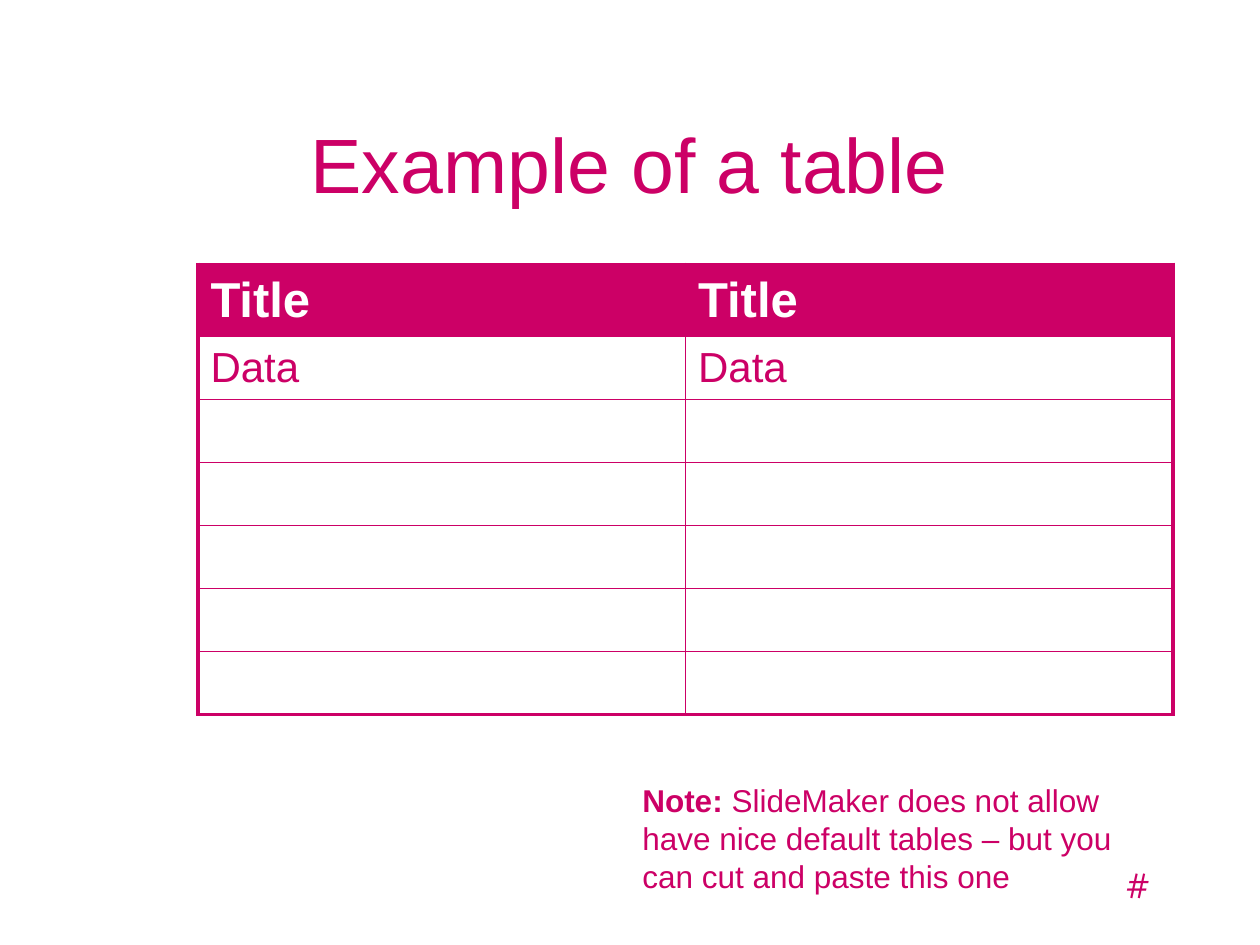
"""Build a slide with a title, a two-column ruled table and a note."""
import pptx
import pptx.dml.color
import pptx.enum.text
import pptx.oxml
import pptx.oxml.ns
import pptx.util
from dataclasses import dataclass

Cm = pptx.util.Cm
Pt = pptx.util.Pt
ALIGN = pptx.enum.text.PP_ALIGN
ANCHOR = pptx.enum.text.MSO_ANCHOR


@dataclass(frozen=True)
class Theme:
    accent: str = "CC0066"
    white: str = "FFFFFF"
    font: str = "Arial"
    number_font: str = "Cambria"
    title: int = 44
    header: int = 28
    body: int = 24
    note: int = 18
    outer_line: float = 2.25
    inner_line: float = 1


THEME = Theme()
TITLE = "Example of a table"
NUMBER = "#"
NOTE = [
    ("Note: ", True),
    ("SlideMaker does not allow have nice default tables – but you can cut and paste this one", False),
]
ROWS = [("Title", "Title"), ("Data", "Data")] + [("", "")] * 5

TITLE_BOX = (1.9, 1.7, 21.59, 3.18)
NUMBER_BOX = (22.43, 17.15, 0.94, 1.27)
NOTE_BOX = (12.7, 15.62, 10.69, 2.54)
TABLE_LEFT, TABLE_TOP = 3.99, 5.33
COLUMN_WIDTH = 9.83
HEADER_HEIGHT, ROW_HEIGHT = 1.45, 1.27


def style(font, size, color=THEME.accent, bold=False, name=THEME.font):
    font.name, font.size, font.bold = name, Pt(size), bold
    font.color.rgb = pptx.dml.color.RGBColor.from_string(color)


def add_text(s, box, runs, size, name=THEME.font, wrap=True):
    tf = s.shapes.add_textbox(*map(Cm, box)).text_frame
    tf.word_wrap = wrap
    p = tf.paragraphs[0]
    for text, bold in runs:
        r = p.add_run()
        r.text = text
        style(r.font, size, bold=bold, name=name)
    return tf


def set_borders(cell, outer_edges):
    tcPr = cell._tc.get_or_add_tcPr()
    for index, edge in enumerate("LRTB"):
        width = THEME.outer_line if edge in outer_edges else THEME.inner_line
        tcPr.insert(index, pptx.oxml.parse_xml(
            f'<a:ln{edge} {pptx.oxml.ns.nsdecls("a")} w="{Pt(width)}">'
            f'<a:solidFill><a:srgbClr val="{THEME.accent}"/></a:solidFill></a:ln{edge}>'))


def add_table(s):
    heights = [HEADER_HEIGHT] + [ROW_HEIGHT] * (len(ROWS) - 1)
    columns = len(ROWS[0])
    table = s.shapes.add_table(
        len(ROWS), columns, Cm(TABLE_LEFT), Cm(TABLE_TOP),
        Cm(COLUMN_WIDTH * columns), Cm(sum(heights))).table
    table.horz_banding = table.first_row = False
    for column in table.columns:
        column.width = Cm(COLUMN_WIDTH)
    for i, (values, height) in enumerate(zip(ROWS, heights)):
        table.rows[i].height = Cm(height)
        for j, value in enumerate(values):
            cell = table.cell(i, j)
            cell.vertical_anchor = ANCHOR.MIDDLE
            cell.text_frame.text = value
            p = cell.text_frame.paragraphs[0]
            if i == 0:
                cell.fill.solid()
                cell.fill.fore_color.rgb = pptx.dml.color.RGBColor.from_string(THEME.accent)
                style(p.runs[0].font, THEME.header, THEME.white, bold=True)
            else:
                cell.fill.background()
                for r in p.runs:
                    style(r.font, THEME.body)
            at_edge = {"L": j == 0, "R": j == columns - 1, "T": i == 0, "B": i == len(ROWS) - 1}
            set_borders(cell, [edge for edge, outer in at_edge.items() if outer])


def main():
    prs = pptx.Presentation()
    prs.slide_width, prs.slide_height = Cm(25.4), Cm(19.05)
    s = prs.slides.add_slide(prs.slide_layouts[6])
    add_text(s, NUMBER_BOX, [(NUMBER, False)], THEME.body, THEME.number_font, wrap=False)
    tf = add_text(s, TITLE_BOX, [(TITLE, False)], THEME.title)
    tf.vertical_anchor = ANCHOR.MIDDLE
    tf.paragraphs[0].alignment = ALIGN.CENTER
    add_table(s)
    add_text(s, NOTE_BOX, NOTE, THEME.note)
    prs.save("out.pptx")


if __name__ == "__main__":
    main()
